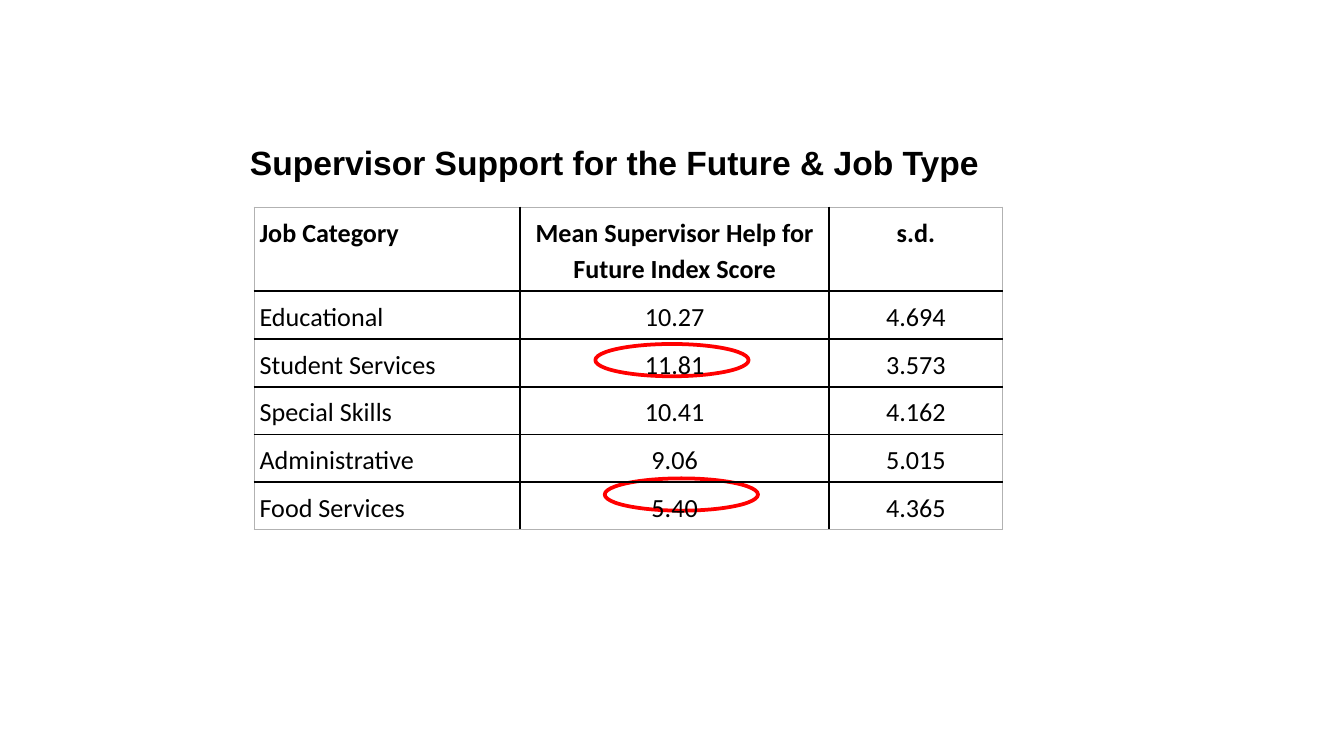
from dataclasses import dataclass

from lxml import etree
from pptx import Presentation
from pptx import util as u
from pptx.dml.color import RGBColor
from pptx.enum import shapes, text
from pptx.oxml import ns


@dataclass(frozen=True)
class Theme:
    ink: str = "000000"
    edge: str = "B2B2B2"
    accent: str = "FF0000"
    title_font: str = "Arial"
    body_font: str = "Calibri"
    title_size: int = 18
    body_size: int = 14


THEME = Theme()

HEADINGS = ("Job Category", "Mean Supervisor Help for Future Index Score", "s.d.")
SCORES = (
    ("Educational", "10.27", "4.694"),
    ("Student Services", "11.81", "3.573"),
    ("Special Skills", "10.41", "4.162"),
    ("Administrative", "9.06", "5.015"),
    ("Food Services", "5.40", "4.365"),
)
COLUMN_WIDTHS = (1.98, 2.3, 1.29)
ROW_HEIGHTS = (0.59, 0.3, 0.33, 0.32, 0.3, 0.33)
CELL_INSET = u.Pt(3)


def inches(box):
    return [u.Inches(length) for length in box]


def write(frame, words, font, size, bold=False, align=text.PP_ALIGN.LEFT,
          spacing=1.0):
    """Fill a text frame with one formatted paragraph."""
    paragraph = frame.paragraphs[0]
    paragraph.alignment = align
    paragraph.line_spacing = spacing
    paragraph.space_before = u.Pt(0)
    run = paragraph.add_run()
    run.text = words
    run.font.name = font
    run.font.size = u.Pt(size)
    run.font.bold = bold
    run.font.color.rgb = RGBColor.from_string(THEME.ink)


def set_border(cell, side, color, width):
    line = etree.SubElement(cell._tc.get_or_add_tcPr(), ns.qn("a:ln" + side),
                            w=str(u.Pt(width)))
    fill = etree.SubElement(line, ns.qn("a:solidFill"))
    etree.SubElement(fill, ns.qn("a:srgbClr"), val=color)


def add_title(slide, box):
    title = slide.shapes.title
    title.left, title.top, title.width, title.height = inches(box)
    frame = title.text_frame
    frame.word_wrap = True
    frame.auto_size = text.MSO_AUTO_SIZE.NONE
    frame.vertical_anchor = text.MSO_ANCHOR.MIDDLE
    frame.margin_left = frame.margin_right = u.Inches(0.05)
    frame.margin_top = frame.margin_bottom = u.Inches(0.05)
    write(frame, "Supervisor Support for the Future & Job Type",
          THEME.title_font, THEME.title_size, bold=True)


def add_highlights(slide, box, offsets):
    """Ring the highest and lowest means, offset from the table's corner."""
    left, top = box[:2]
    for across, down in offsets:
        ring = slide.shapes.add_shape(
            shapes.MSO_SHAPE.OVAL, *inches((left + across, top + down, 1.14, 0.24)))
        ring.shadow.inherit = False
        ring.fill.background()
        ring.line.color.rgb = RGBColor.from_string(THEME.accent)
        ring.line.width = u.Pt(2)


def add_score_table(slide, box):
    rows = (HEADINGS, *SCORES)
    table = slide.shapes.add_table(len(rows), len(HEADINGS), *inches(box)).table
    table.first_row = table.horz_banding = False
    for column, width in zip(table.columns, COLUMN_WIDTHS):
        column.width = u.Inches(width)
    for row, height in zip(table.rows, ROW_HEIGHTS):
        row.height = u.Inches(height)

    last_row, last_column = len(rows) - 1, len(HEADINGS) - 1
    for r, values in enumerate(rows):
        for c, value in enumerate(values):
            cell = table.cell(r, c)
            # Thin grey around the outside, black between cells
            outer = {"L": c == 0, "R": c == last_column,
                     "T": r == 0, "B": r == last_row}
            for side, is_outer in outer.items():
                color, width = (THEME.edge, 0.5) if is_outer else (THEME.ink, 1)
                set_border(cell, side, color, width)
            cell.fill.background()
            cell.margin_left = cell.margin_right = CELL_INSET
            cell.margin_top = cell.margin_bottom = CELL_INSET
            write(cell.text_frame, value, THEME.body_font, THEME.body_size,
                  bold=r == 0, spacing=1.15,
                  align=text.PP_ALIGN.CENTER if c else text.PP_ALIGN.LEFT)


def main():
    deck = Presentation()
    deck.slide_width = u.Inches(10)
    deck.slide_height = deck.slide_width * 9 // 16
    slide = deck.slides.add_slide(deck.slide_layouts[5])  # Title Only

    table_box = (1.89, 1.54, 5.57, 2.17)
    add_title(slide, (1.81, 1.02, 5.57, 0.37))
    # Rings sit behind the unfilled table
    add_highlights(slide, table_box, ((2.61, 2.02), (2.54, 1.02)))
    add_score_table(slide, table_box)
    deck.save("out.pptx")


if __name__ == "__main__":
    main()
